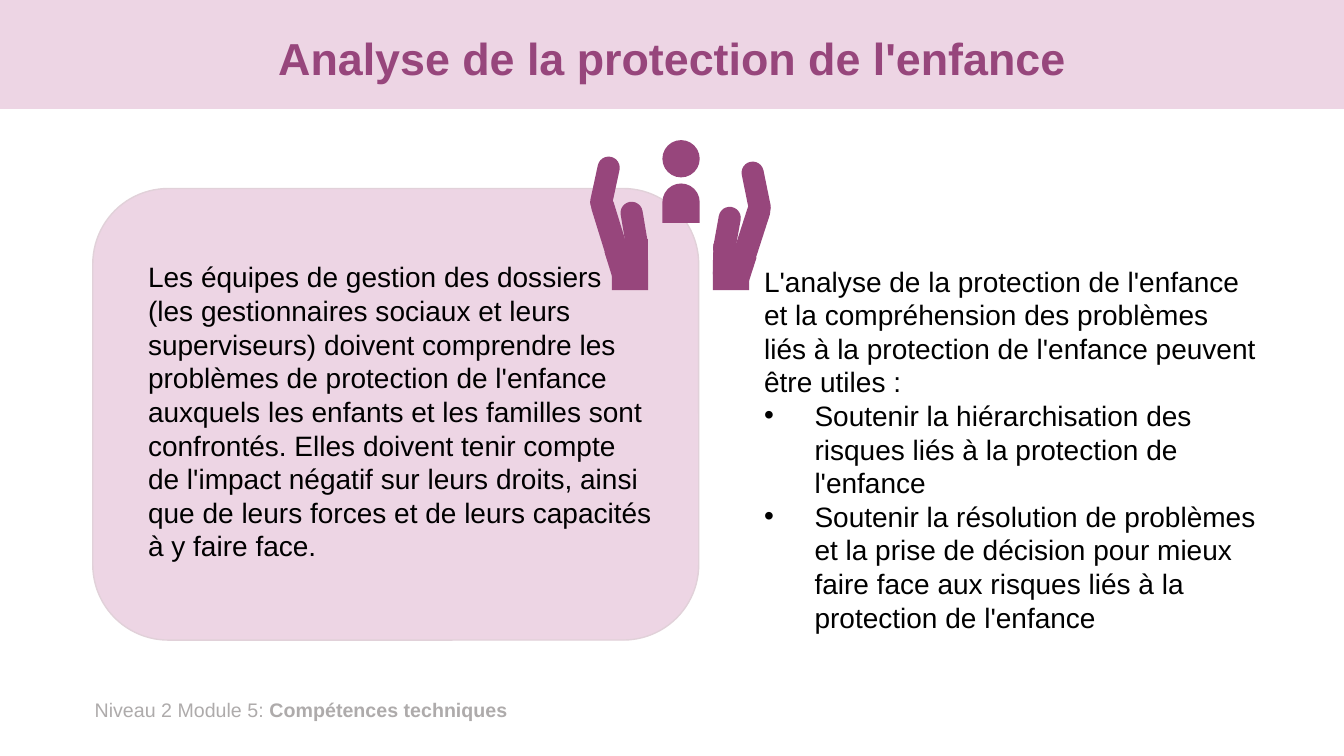
from dataclasses import dataclass

from pptx import Presentation
from pptx.dml.color import RGBColor
from pptx.enum.shapes import MSO_SHAPE as Preset
from pptx.enum.text import MSO_ANCHOR as Anchor, PP_ALIGN as Align
from pptx.oxml import parse_xml
from pptx.oxml.ns import nsdecls
from pptx.shapes.autoshape import Shape
from pptx.slide import Slide
from pptx.util import Inches, Pt


@dataclass(frozen=True)
class Theme:
    font: str = "Arial"
    pale: str = "EDD5E4"
    outline: str = "E1D1D9"
    plum: str = "97467C"
    body: str = "000000"
    muted: str = "AEABAB"
    title_size: int = 32
    body_size: int = 20
    footer_size: int = 14


@dataclass(frozen=True)
class Part:
    """A filled shape; lengths in inches, rotation in degrees."""
    preset: Preset
    left: float
    top: float
    width: float
    height: float
    rotation: float = 0
    adjustments: tuple[float, ...] = ()
    flipped: bool = False


@dataclass(frozen=True)
class Span:
    text: str
    bold: bool = False


@dataclass(frozen=True)
class Para:
    spans: tuple[Span, ...]
    bullet: bool = False


@dataclass(frozen=True)
class TextBlock:
    left: float
    top: float
    width: float
    height: float
    paras: tuple[Para, ...]
    size: int
    color: str
    align: Align = Align.LEFT
    anchor: Anchor = Anchor.TOP
    line_spacing: float = 1.0


THEME = Theme()
BULLET_INDENT = 0.5

# Panels
BANNER = Part(Preset.RECTANGLE, 0, 0, 13.33, 1.08)
CARD = Part(Preset.ROUNDED_RECTANGLE, 0.92, 1.87, 6.01, 4.48, adjustments=(0.167,))

# Icon: a child between two raised hands
ROUND_ENDS = (0.5,)
LEFT_HAND = (
    Part(Preset.ROUNDED_RECTANGLE, 5.94, 1.92, 0.23, 0.75, -17.2, ROUND_ENDS),
    Part(Preset.ROUNDED_RECTANGLE, 5.89, 1.55, 0.22, 0.57, 12.2, ROUND_ENDS),
    Part(Preset.ROUNDED_RECTANGLE, 6.18, 2.0, 0.22, 0.53, -9.5, ROUND_ENDS),
    Part(Preset.FLOWCHART_MANUAL_INPUT, 6.11, 2.35, 0.29, 0.45, 72.8, flipped=True),
)
LEFT_WRIST = Part(Preset.RECTANGLE, 6.07, 2.58, 0.36, 0.3)
CHILD = (
    Part(Preset.ROUND_2_SAME_RECTANGLE, 6.57, 1.82, 0.37, 0.39, adjustments=(0.5, 0)),
    Part(Preset.OVAL, 6.57, 1.39, 0.37, 0.37),
)
MIRROR_AXIS = 6.75
RIGHT_HAND_DROP = 0.05
RIGHT_HAND_TILT = 0.7

# Texts
TEXTS = (
    TextBlock(0.84, 6.87, 4.55, 0.34,
              (Para((Span("Niveau 2 Module 5: "), Span("Compétences techniques", True))),),
              THEME.footer_size, THEME.muted),
    TextBlock(0.92, 0.13, 11.5, 0.95,
              (Para((Span("Analyse de la protection de l'enfance", True),)),),
              THEME.title_size, THEME.plum, Align.CENTER, Anchor.MIDDLE, 0.9),
    TextBlock(1.37, 2.53, 5.21, 3.13, (
        Para((Span(
            "Les équipes de gestion des dossiers (les gestionnaires sociaux et leurs "
            "superviseurs) doivent comprendre les problèmes de protection de l'enfance "
            "auxquels les enfants et les familles sont confrontés. Elles doivent tenir "
            "compte de l'impact négatif sur leurs droits, ainsi que de leurs forces et "
            "de leurs capacités à y faire face."),)),
    ), THEME.body_size, THEME.body),
    TextBlock(7.48, 2.57, 5.09, 3.8, (
        Para((Span(
            "L'analyse de la protection de l'enfance et la compréhension des problèmes "
            "liés à la protection de l'enfance peuvent être utiles :"),)),
        Para((Span(
            "Soutenir la hiérarchisation des risques liés à la protection de "
            "l'enfance"),), bullet=True),
        Para((Span(
            "Soutenir la résolution de problèmes et la prise de décision pour mieux "
            "faire face aux risques liés à la protection de l'enfance"),), bullet=True),
    ), THEME.body_size, THEME.body),
)


def mirror(part: Part, drop: float = 0, tilt: float = 0) -> Part:
    """Reflect a part of the left hand across the icon's axis."""
    return Part(part.preset, 2 * MIRROR_AXIS - part.left - part.width, part.top + drop,
                part.width, part.height, tilt - part.rotation, part.adjustments)


def draw_part(page: Slide, part: Part, fill: str) -> Shape:
    shape = page.shapes.add_shape(part.preset, Inches(part.left), Inches(part.top),
                                  Inches(part.width), Inches(part.height))
    shape.shadow.inherit = False
    shape.fill.solid()
    shape.fill.fore_color.rgb = RGBColor.from_string(fill)
    shape.line.fill.background()
    shape.rotation = part.rotation
    for index, value in enumerate(part.adjustments):
        shape.adjustments[index] = value
    if part.flipped:
        shape.element.spPr.get_or_add_xfrm().set("flipH", "1")
    return shape


def draw_text(page: Slide, block: TextBlock) -> None:
    box = page.shapes.add_textbox(Inches(block.left), Inches(block.top),
                                  Inches(block.width), Inches(block.height))
    frame = box.text_frame
    frame.word_wrap = True
    frame.vertical_anchor = block.anchor
    for index, item in enumerate(block.paras):
        para = frame.paragraphs[0] if index == 0 else frame.add_paragraph()
        para.alignment = block.align
        para.line_spacing = block.line_spacing
        if item.bullet:
            properties = para._p.get_or_add_pPr()
            properties.set("marL", str(Inches(BULLET_INDENT)))
            properties.set("indent", str(-Inches(BULLET_INDENT)))
            properties.append(parse_xml(f'<a:buFont {nsdecls("a")} typeface="{THEME.font}"/>'))
            properties.append(parse_xml(f'<a:buChar {nsdecls("a")} char="•"/>'))
        for span in item.spans:
            run = para.add_run()
            run.text = span.text
            run.font.name = THEME.font
            run.font.size = Pt(block.size)
            run.font.bold = span.bold
            run.font.color.rgb = RGBColor.from_string(block.color)


def main() -> None:
    deck = Presentation()
    deck.slide_width, deck.slide_height = Inches(13.33), Inches(7.5)
    page = deck.slides.add_slide(deck.slide_layouts[6])

    # Banner and card
    draw_part(page, BANNER, THEME.pale)
    card = draw_part(page, CARD, THEME.pale)
    card.line.color.rgb = RGBColor.from_string(THEME.outline)
    card.line.width = Pt(1)

    # Footer, title and both columns
    for block in TEXTS:
        draw_text(page, block)

    # Icon
    right_hand = tuple(mirror(part, RIGHT_HAND_DROP, RIGHT_HAND_TILT) for part in LEFT_HAND)
    for part in (*LEFT_HAND, *right_hand, *CHILD, LEFT_WRIST, mirror(LEFT_WRIST)):
        draw_part(page, part, THEME.plum)

    deck.save("out.pptx")


if __name__ == "__main__":
    main()
